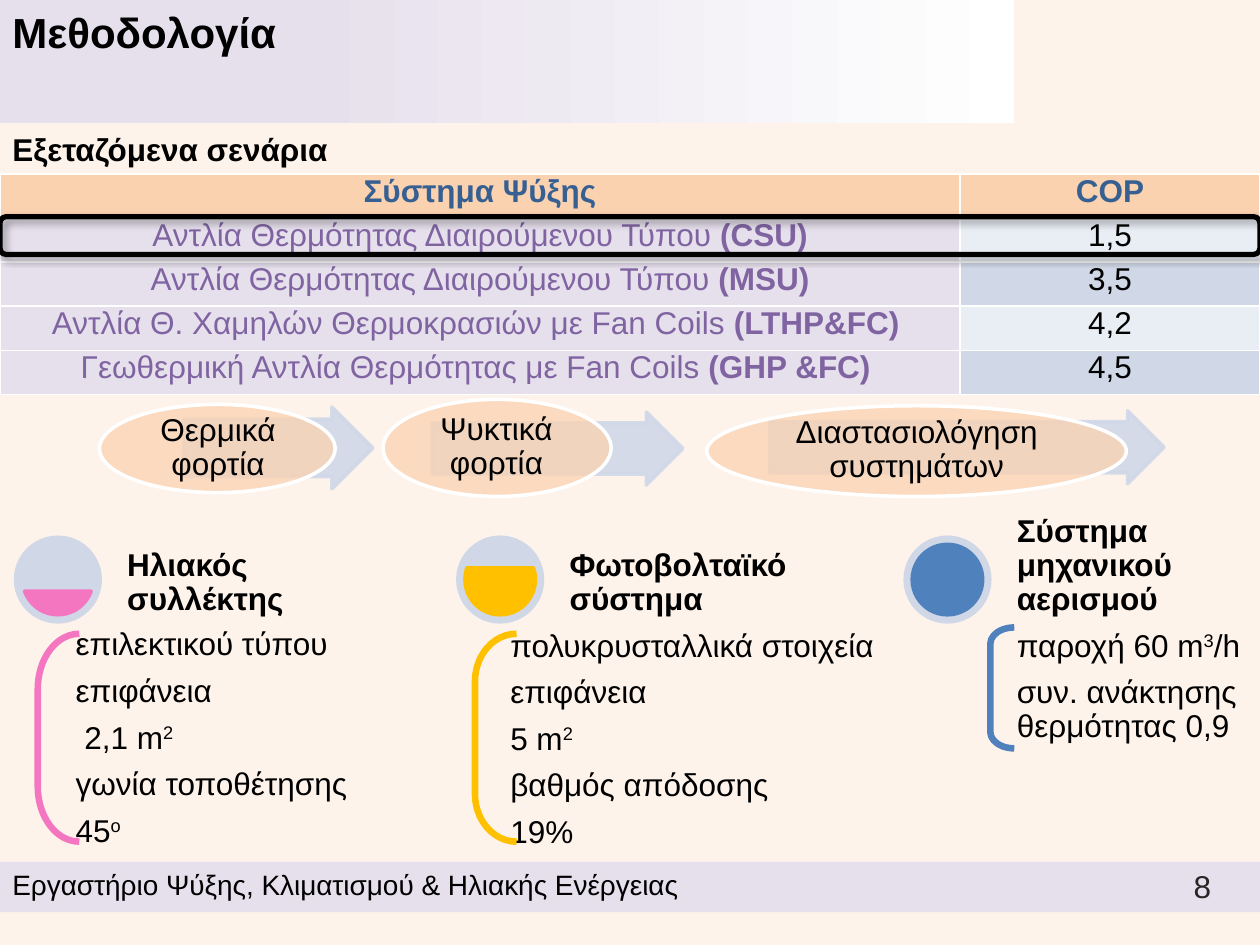
from dataclasses import dataclass

from lxml.etree import SubElement
from pptx import Presentation
from pptx.dml.color import RGBColor
from pptx.enum.shapes import MSO_SHAPE
from pptx.enum.text import MSO_ANCHOR, PP_ALIGN
from pptx.oxml import parse_xml
from pptx.oxml.ns import nsdecls, qn
from pptx.util import Inches, Pt

BLACK = RGBColor(0x00, 0x00, 0x00)
GRAY = RGBColor(0x26, 0x26, 0x26)
WHITE = RGBColor(0xFF, 0xFF, 0xFF)
CREAM = RGBColor(0xFE, 0xF3, 0xEB)
LILAC = RGBColor(0xE6, 0xE0, 0xEC)
PURPLE = RGBColor(0x80, 0x64, 0xA2)
NAVY = RGBColor(0x37, 0x60, 0x92)
PEACH = RGBColor(0xFB, 0xD2, 0xB0)
PALE = RGBColor(0xE9, 0xED, 0xF4)
MIST = RGBColor(0xD0, 0xD8, 0xE8)
PINK = RGBColor(0xF4, 0x76, 0xC1)
GOLD = RGBColor(0xFF, 0xC0, 0x00)
BLUE = RGBColor(0x4F, 0x81, 0xBD)

Box = tuple[float, float, float, float]


@dataclass
class Run:
    text: str
    bold: bool = False
    color: RGBColor = BLACK
    size: float = 18
    raised: bool = False


@dataclass
class System:
    title: str
    color: RGBColor
    left: float
    chord: tuple[float, float]
    details_box: Box
    details: list[list[Run]]
    bracket_box: Box
    bracket_adj: float


@dataclass
class Step:
    text: str
    arrow: Box
    oval: Box
    label: Box


def add_runs(p, runs: list[Run]) -> None:
    for run in runs:
        r = p.add_run()
        r.text = run.text
        r.font.name = "Arial"
        r.font.size = Pt(run.size)
        r.font.bold = run.bold
        r.font.color.rgb = run.color
        if run.raised:
            r._r.get_or_add_rPr().set("baseline", "30000")


def add_text(box: Box, paragraphs: list[list[Run]], align=PP_ALIGN.LEFT,
             anchor=MSO_ANCHOR.TOP, inset: float | None = None,
             tight: bool = False) -> None:
    tf = slide.shapes.add_textbox(*map(Inches, box)).text_frame
    tf.word_wrap = True
    tf.vertical_anchor = anchor
    if inset is not None:
        tf.margin_left = tf.margin_right = Inches(inset)
        tf.margin_top = tf.margin_bottom = Inches(inset)
    for i, runs in enumerate(paragraphs):
        p = tf.add_paragraph() if i else tf.paragraphs[0]
        p.alignment = align
        if tight:
            p.line_spacing = 0.9
            p.space_after = Pt(7.2)
        add_runs(p, runs)


def set_alpha(color_parent, percent: int) -> None:
    for color in color_parent.iter(qn("a:srgbClr")):
        SubElement(color, qn("a:alpha")).set("val", str(percent * 1000))


def add_shape(kind, box: Box, fill: RGBColor | None = None, line: RGBColor | None = None,
              width: float = 2, adj: tuple[float, ...] = ()):
    sp = slide.shapes.add_shape(kind, *map(Inches, box))
    sp.shadow.inherit = False
    for i, value in enumerate(adj):
        sp.adjustments[i] = value
    if fill is None:
        sp.fill.background()
    else:
        sp.fill.solid()
        sp.fill.fore_color.rgb = fill
    if line is None:
        sp.line.fill.background()
    else:
        sp.line.color.rgb = line
        sp.line.width = Pt(width)
    return sp


def fill_cell(cell, runs: list[Run], fill: RGBColor, top: float, bottom: float) -> None:
    cell.fill.solid()
    cell.fill.fore_color.rgb = fill
    cell.margin_left = cell.margin_right = Inches(0.07)
    cell.margin_top = cell.margin_bottom = 0
    p = cell.text_frame.paragraphs[0]
    p.alignment = PP_ALIGN.CENTER
    p.space_after = Pt(9)
    add_runs(p, runs)
    borders = {"lnL": 1, "lnR": 1, "lnT": top, "lnB": bottom}
    for i, (side, width) in enumerate(borders.items()):
        cell._tc.get_or_add_tcPr().insert(i, parse_xml(
            f'<a:{side} {nsdecls("a")} w="{Pt(width)}"><a:solidFill>'
            f'<a:srgbClr val="{WHITE}"/></a:solidFill></a:{side}>'))


def draw_system(s: System) -> None:
    top = 4.25
    add_shape(MSO_SHAPE.OVAL, (s.left, top, 0.7, 0.7), MIST)
    add_shape(MSO_SHAPE.CHORD, (s.left + 0.07, top + 0.07, 0.56, 0.56),
              s.color, s.color, adj=s.chord)
    add_text(s.details_box, s.details, inset=0.05, tight=True)
    add_text((s.left + 0.85, top, 2.08, 0.7), [[Run(s.title, bold=True)]],
             anchor=MSO_ANCHOR.BOTTOM, inset=0.05, tight=True)
    add_shape(MSO_SHAPE.LEFT_BRACKET, s.bracket_box, line=s.color,
              width=3.75, adj=(s.bracket_adj,))


def draw_step(s: Step) -> None:
    arrow = add_shape(MSO_SHAPE.RIGHT_ARROW, s.arrow, MIST, MIST, adj=(0.7, 0.5))
    set_alpha(arrow._element.spPr, 90)
    oval = add_shape(MSO_SHAPE.OVAL, s.oval, PEACH, WHITE)
    set_alpha(oval._element.spPr.find(qn("a:solidFill")), 74)
    add_text(s.label, [[Run(s.text)]], PP_ALIGN.CENTER, MSO_ANCHOR.MIDDLE, 0.01, True)


prs = Presentation()
prs.slide_width, prs.slide_height = Inches(10), Inches(7.5)
slide = prs.slides.add_slide(prs.slide_layouts[6])
slide.background.fill.solid()
slide.background.fill.fore_color.rgb = CREAM

# Header band, footer band and headings
band = add_shape(MSO_SHAPE.RECTANGLE, (0, 0, 8.05, 0.98), LILAC)
band.fill.gradient()
band.fill.gradient_angle = 0
for stop, color, position in zip(band.fill.gradient_stops, (LILAC, WHITE), (0.3, 1)):
    stop.color.rgb = color
    stop.position = position
add_shape(MSO_SHAPE.RECTANGLE, (0, 6.84, 10, 0.4), LILAC)
add_text((0, 6.84, 6.47, 0.37),
         [[Run("Εργαστήριο Ψύξης, Κλιματισμού & Ηλιακής Ενέργειας", size=16)]])
add_text((7.46, 6.83, 2.25, 0.4), [[Run("8", color=GRAY)]], PP_ALIGN.RIGHT)
add_text((0, 0, 6.29, 0.55), [[Run("Μεθοδολογία", bold=True, size=24)]])
add_text((0, 0.98, 6.17, 0.4), [[Run("Εξεταζόμενα σενάρια", bold=True)]])

# Scenario table, with the first scenario framed
SCENARIOS = [
    ("Αντλία Θερμότητας Διαιρούμενου Τύπου ", "(CSU)", "1,5"),
    ("Αντλία Θερμότητας Διαιρούμενου Τύπου ", "(MSU)", "3,5"),
    ("Αντλία Θ. Χαμηλών Θερμοκρασιών με Fan Coils ", "(LTHP&FC) ", "4,2"),
    ("Γεωθερμική Αντλία Θερμότητας με Fan Coils ", "(GHP &FC) ", "4,5"),
]
table = slide.shapes.add_table(len(SCENARIOS) + 1, 2, 0, Inches(1.38),
                               Inches(10), Inches(1.75)).table
table.columns[0].width, table.columns[1].width = Inches(7.62), Inches(2.38)
for col, heading in enumerate(("Σύστημα Ψύξης", "COP")):
    fill_cell(table.cell(0, col), [Run(heading, True, NAVY)], PEACH, 1, 3)
for row, (name, code, cop) in enumerate(SCENARIOS, 1):
    top = 3 if row == 1 else 1
    fill_cell(table.cell(row, 0), [Run(name, color=PURPLE), Run(code, True, PURPLE)],
              LILAC, top, 1)
    fill_cell(table.cell(row, 1), [Run(cop)], PALE if row % 2 else MIST, top, 1)
frame = add_shape(MSO_SHAPE.ROUNDED_RECTANGLE, (0, 1.72, 10, 0.3), line=BLACK, width=3)
shadow = SubElement(frame._element.spPr.find(qn("a:effectLst")), qn("a:outerShdw"),
                    blurRad=str(Pt(4)), dist=str(Pt(3)), dir=str(45 * 60000))
SubElement(shadow, qn("a:srgbClr"), val=str(BLACK))
set_alpha(shadow, 40)

# Systems: gauge, title and bracketed details
SQUARED = Run("2", raised=True)
SYSTEMS = [
    System("Ηλιακός συλλέκτης", PINK, 0.11, (11.68, 96.32), (0.55, 4.94, 2.96, 2.96),
           [[Run("επιλεκτικού τύπου")], [Run("επιφάνεια")], [Run(" 2,1 m"), SQUARED],
            [Run("γωνία τοποθέτησης")], [Run("45"), Run("ο", raised=True)]],
           (0.3, 5.03, 0.33, 1.65), 1.33),
    System("Φωτοβολταϊκό σύστημα", GOLD, 3.62, (204.32, 119.68), (4, 4.95, 3.03, 2.96),
           [[Run("πολυκρυσταλλικά στοιχεία")], [Run("επιφάνεια")], [Run("5 m"), SQUARED],
            [Run("βαθμός απόδοσης")], [Run("19%")]],
           (3.77, 5.03, 0.33, 1.65), 1.15),
    System("Σύστημα μηχανικού αερισμού", BLUE, 7.17, (162, 162), (8.02, 4.95, 2.08, 2.96),
           [[Run("παροχή 60 m"), Run("3", raised=True), Run("/h")],
            [Run("συν. ανάκτησης θερμότητας 0,9")]],
           (7.86, 4.98, 0.19, 0.96), 0.68),
]
for system in SYSTEMS:
    draw_system(system)

# Process steps
STEPS = [
    Step("Θερμικά φορτία", (1.46, 3.23, 1.5, 0.65), (0.79, 3.21, 1.87, 0.7),
         (1.07, 3.31, 1.32, 0.49)),
    Step("Ψυκτικά φορτία", (3.43, 3.27, 1.99, 0.58), (3.04, 3.17, 1.81, 0.77),
         (3.3, 3.28, 1.28, 0.54)),
    Step("Διαστασιολόγηση συστημάτων", (6.11, 3.26, 3.13, 0.58), (5.61, 3.22, 3.33, 0.72),
         (6.1, 3.32, 2.35, 0.51)),
]
for step in STEPS:
    draw_step(step)

prs.save("out.pptx")
